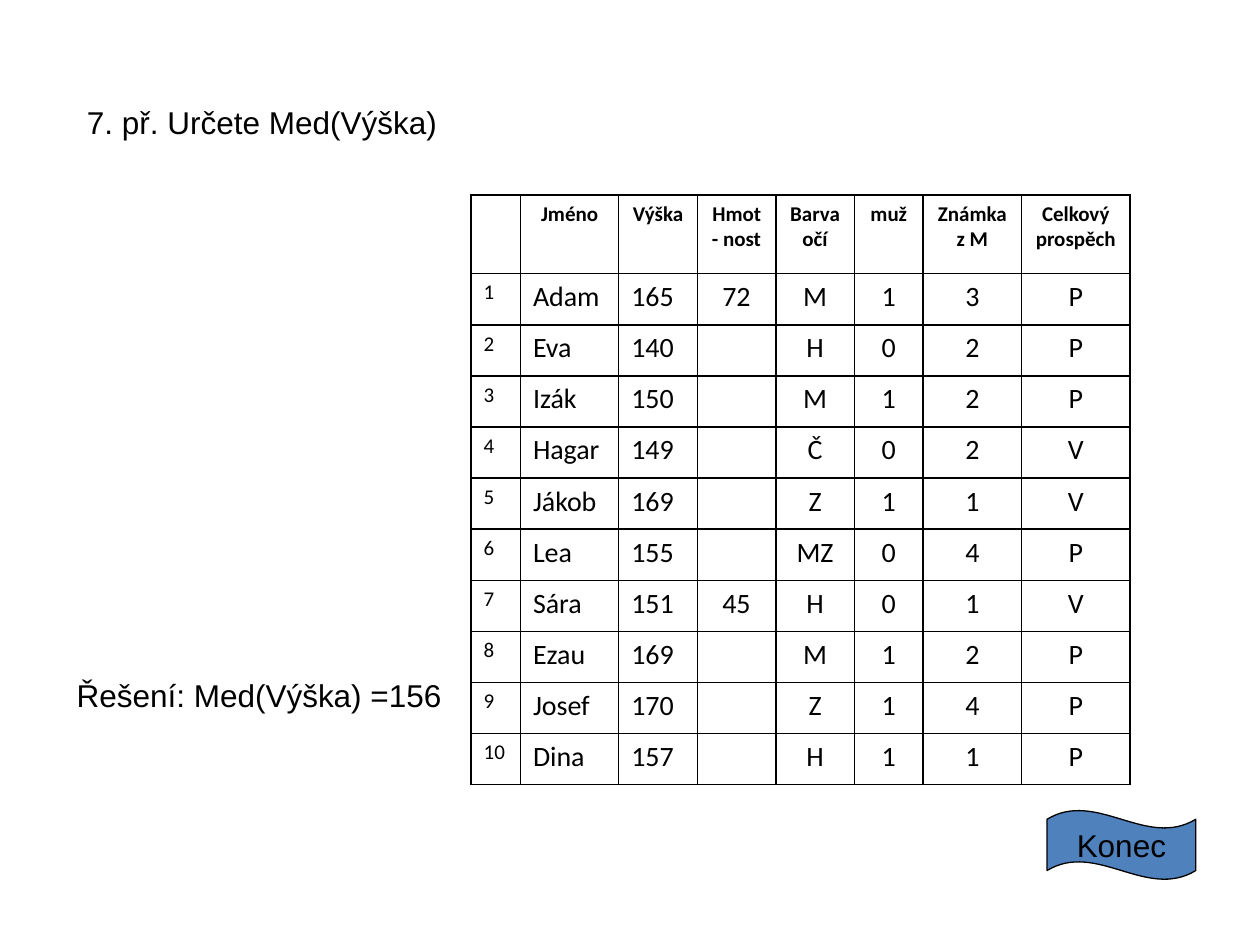
from lxml import etree
from pptx import Presentation
from pptx.dml.color import RGBColor
from pptx.enum.shapes import MSO_SHAPE
from pptx.enum.text import MSO_ANCHOR, MSO_AUTO_SIZE, PP_ALIGN
from pptx.oxml.ns import qn
from pptx.util import Pt

LEFT, CENTER = PP_ALIGN.LEFT, PP_ALIGN.CENTER
TOP, MIDDLE = MSO_ANCHOR.TOP, MSO_ANCHOR.MIDDLE
GROW = MSO_AUTO_SIZE.SHAPE_TO_FIT_TEXT
WAVE = MSO_SHAPE.WAVE

THEME = {
    "black": RGBColor(0, 0, 0),
    "white": RGBColor(255, 255, 255),
    "blue": RGBColor(0x4F, 0x81, 0xBD),
    "text_font": "Arial",
    "table_font": "Calibri",
    "text_size": 18,
    "label_size": 12,
    "value_size": 16,
}


def write(frame, text, size=THEME["text_size"], font=THEME["text_font"],
          bold=False, align=LEFT):
    para = frame.paragraphs[0]
    para.alignment = align
    span = para.add_run()
    span.text = text
    span.font.size = Pt(size)
    span.font.name = font
    span.font.bold = bold
    span.font.color.rgb = THEME["black"]


def add_borders(cell):
    properties = cell._tc.get_or_add_tcPr()
    for index, side in enumerate(("a:lnL", "a:lnR", "a:lnT", "a:lnB")):
        line = etree.Element(qn(side), w=str(Pt(1)))
        fill = etree.SubElement(line, qn("a:solidFill"))
        etree.SubElement(fill, qn("a:srgbClr"), val=str(THEME["black"]))
        properties.insert(index, line)


deck = Presentation()
deck.slide_width, deck.slide_height = Pt(720), Pt(540)
page = deck.slides.add_slide(deck.slide_layouts[5])

title = page.shapes.title
title.left, title.top, title.width, title.height = Pt(42.5), Pt(55), Pt(295), Pt(29)
title.text_frame.word_wrap = True
title.text_frame.auto_size = GROW
title.text_frame.vertical_anchor = TOP
write(title.text_frame, "7. př. Určete Med(Výška)")

headers = ["", "Jméno", "Výška", "Hmot- nost", "Barva očí", "muž",
           "Známka z M", "Celkový prospěch"]
pupils = [
    ("Adam", "165", "72", "M", "1", "3", "P"),
    ("Eva", "140", "", "H", "0", "2", "P"),
    ("Izák", "150", "", "M", "1", "2", "P"),
    ("Hagar", "149", "", "Č", "0", "2", "V"),
    ("Jákob", "169", "", "Z", "1", "1", "V"),
    ("Lea", "155", "", "MZ", "0", "4", "P"),
    ("Sára", "151", "45", "H", "0", "1", "V"),
    ("Ezau", "169", "", "M", "1", "2", "P"),
    ("Josef", "170", "", "Z", "1", "4", "P"),
    ("Dina", "157", "", "H", "1", "1", "P"),
]
rows = [headers] + [(str(number), *pupil) for number, pupil in enumerate(pupils, 1)]
widths = [28.2, 56.2, 44.9, 44.9, 44.9, 39.4, 56.2, 62]
header_height, row_height = 45, 29.2

table = page.shapes.add_table(
    len(rows), len(widths), Pt(269.2), Pt(111.4), Pt(sum(widths)),
    Pt(header_height + row_height * len(pupils))).table
table.first_row = False
table.horz_banding = False
for column, width in zip(table.columns, widths):
    column.width = Pt(width)
for row_index, values in enumerate(rows):
    is_header = row_index == 0
    table.rows[row_index].height = Pt(header_height if is_header else row_height)
    for column_index, value in enumerate(values):
        cell = table.cell(row_index, column_index)
        cell.fill.solid()
        cell.fill.fore_color.rgb = THEME["white"]
        add_borders(cell)
        if value:
            is_label = is_header or column_index == 0
            write(cell.text_frame, value, font=THEME["table_font"], bold=is_header,
                  size=THEME["label_size" if is_label else "value_size"],
                  align=CENTER if is_header or column_index > 2 else LEFT)

answer = page.shapes.add_textbox(Pt(36.7), Pt(383), Pt(227), Pt(29))
answer.text_frame.word_wrap = True
answer.text_frame.auto_size = GROW
write(answer.text_frame, "Řešení: Med(Výška) =156")

end_button = page.shapes.add_shape(WAVE, Pt(598.3), Pt(463), Pt(85), Pt(39.6))
end_button.adjustments[0] = 0.13
end_button.adjustments[1] = 0
end_button.shadow.inherit = False
end_button.fill.solid()
end_button.fill.fore_color.rgb = THEME["blue"]
end_button.line.color.rgb = THEME["black"]
end_button.line.width = Pt(0.75)
end_button.text_frame.word_wrap = False
end_button.text_frame.vertical_anchor = MIDDLE
write(end_button.text_frame, "Konec", align=CENTER)

deck.save("out.pptx")
